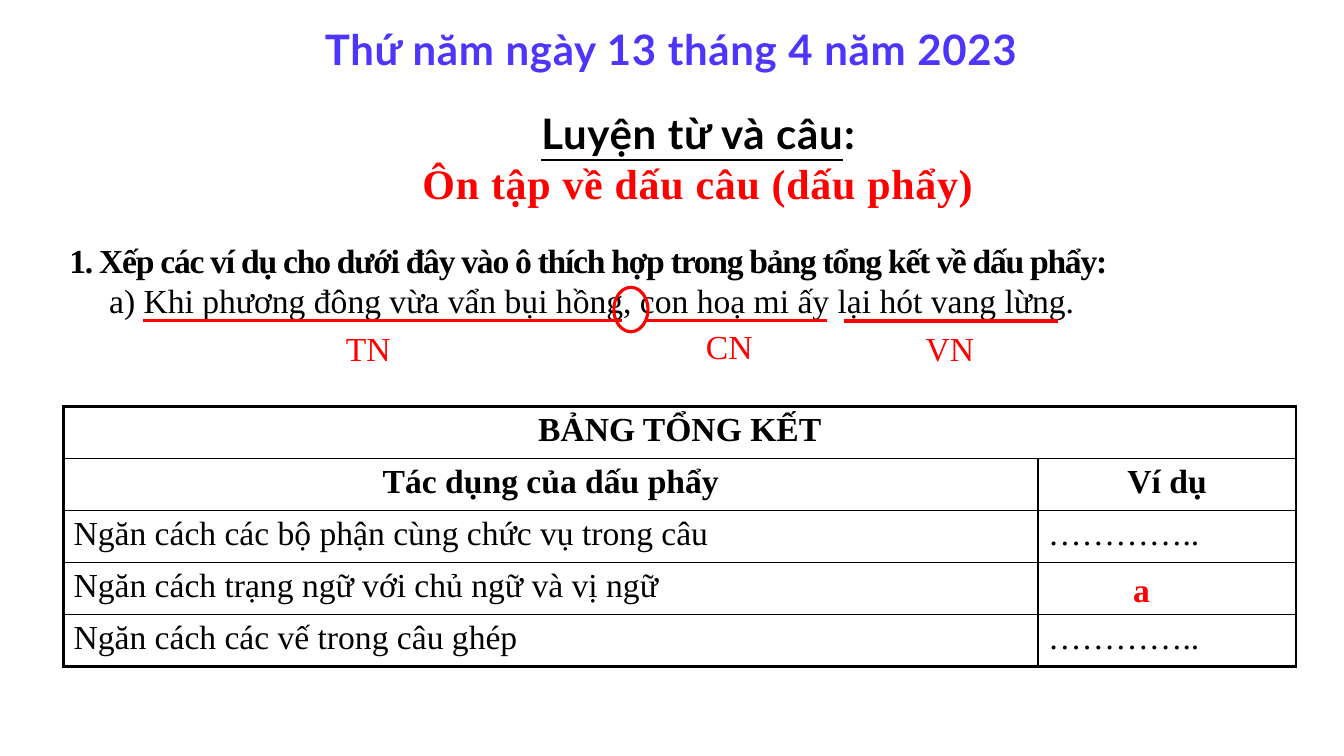
from dataclasses import dataclass

from lxml.etree import SubElement
from pptx import Presentation
from pptx.dml.color import RGBColor
from pptx.enum.shapes import MSO_CONNECTOR, MSO_SHAPE
from pptx.enum.text import MSO_ANCHOR, MSO_AUTO_SIZE, PP_ALIGN
from pptx.oxml import parse_xml
from pptx.oxml.ns import nsdecls, qn
from pptx.util import Cm, Pt


@dataclass(frozen=True)
class Theme:
    heading_font: str = "Lato"
    text_font: str = "Times New Roman"
    black: RGBColor = RGBColor(0, 0, 0)
    red: RGBColor = RGBColor(255, 0, 0)
    violet: RGBColor = RGBColor(0x4D, 0x35, 0xFB)
    heading_size: Pt = Pt(30)
    text_size: Pt = Pt(24)
    thin: Pt = Pt(1)
    thick: Pt = Pt(2.25)


THEME = Theme()
DOTS = "………….."
TABLE_ROWS = [
    ("BẢNG TỔNG KẾT", ""),
    ("Tác dụng của dấu phẩy", "Ví dụ"),
    ("Ngăn cách các bộ phận cùng chức vụ trong câu", DOTS),
    ("Ngăn cách trạng ngữ với chủ ngữ và vị ngữ", ""),
    ("Ngăn cách các vế trong câu ghép", DOTS),
]
# Label, its left and top, then the start, end and weight of its underline
SENTENCE_PARTS = [
    ("TN", 8.43, 8.13, 3.61, 15.67, Pt(2.25)),
    ("CN", 17.53, 8.08, 16.31, 20.85, Pt(2.25)),
    ("VN", 23.09, 8.13, 21.26, 26.67, Pt(3)),
]


def style(para, color=THEME.black, font=THEME.text_font, size=THEME.text_size,
          bold=False, align=PP_ALIGN.LEFT, spacing=0):
    """Format a whole paragraph; spacing is between letters, in points."""
    para.alignment = align
    para.space_before = Pt(0)
    para.font.name = font
    para.font.size = size
    para.font.bold = bold
    para.font.color.rgb = color
    properties = para._p.get_or_add_pPr()
    properties.get_or_add_defRPr().set("spc", str(round(spacing * 100)))


def place(shape, left, top, width, height):
    shape.left, shape.top = Cm(left), Cm(top)
    shape.width, shape.height = Cm(width), Cm(height)


def prepare_frame(shape, wrap=True):
    frame = shape.text_frame
    frame.word_wrap = wrap
    frame.auto_size = MSO_AUTO_SIZE.NONE
    frame.vertical_anchor = MSO_ANCHOR.TOP
    return frame


def add_text(page, text, left, top, width, height, wrap=True, **look):
    box = page.shapes.add_textbox(Cm(left), Cm(top), Cm(width), Cm(height))
    para = prepare_frame(box, wrap).paragraphs[0]
    para.text = text
    style(para, align=PP_ALIGN.CENTER, **look)


def fill_title(page):
    title = page.shapes.title
    place(title, 7.42, 2.57, 20.35, 2.82)
    frame = prepare_frame(title)
    subject = frame.paragraphs[0]
    span = subject.add_run()
    span.text = "Luyện từ và câu"
    span.font.underline = True
    subject.add_run().text = ":"
    lesson = frame.add_paragraph()
    lesson.text = "Ôn tập về dấu câu (dấu phẩy)"
    heading = dict(size=THEME.heading_size, bold=True,
                   align=PP_ALIGN.CENTER, spacing=0.5)
    style(subject, font=THEME.heading_font, **heading)
    style(lesson, color=THEME.red, **heading)


def fill_exercise(page):
    body = page.placeholders[1]
    place(body, 1.45, 5.89, 31.34, 2.36)
    frame = prepare_frame(body)
    frame.margin_left = frame.margin_right = Cm(0.3)
    frame.margin_top = frame.margin_bottom = Cm(0.15)
    task = frame.paragraphs[0]
    task.text = ("1. Xếp các ví dụ cho dưới đây vào ô thích hợp "
                 "trong bảng tổng kết về dấu phẩy:")
    example = frame.add_paragraph()
    example.text = ("a) Khi phương đông vừa vẩn bụi hồng, con hoạ mi ấy "
                    "lại hót vang lừng.")
    style(task, bold=True, align=PP_ALIGN.JUSTIFY, spacing=-0.9)
    style(example, align=PP_ALIGN.JUSTIFY)
    for para, indent in ((task, Cm(0)), (example, Cm(1))):
        properties = para._p.get_or_add_pPr()
        properties.set("marL", "0")
        properties.set("indent", str(indent))
        bullet = parse_xml(f"<a:buNone {nsdecls('a')}/>")
        properties.find(qn("a:defRPr")).addprevious(bullet)


def set_borders(cell, outer_edges):
    """Draw the four sides, in the order left, right, top, bottom."""
    properties = cell._tc.get_or_add_tcPr()
    for index, (side, is_outer) in enumerate(zip("LRTB", outer_edges)):
        width = THEME.thick if is_outer else THEME.thin
        properties.insert(index, parse_xml(
            f'<a:ln{side} {nsdecls("a")} w="{width}"><a:solidFill>'
            f'<a:srgbClr val="{THEME.black}"/></a:solidFill></a:ln{side}>'))


def add_summary_table(page):
    row_height, widths = Cm(1.31), (Cm(24.56), Cm(6.5))
    last_row, last_column = len(TABLE_ROWS) - 1, len(widths) - 1
    table = page.shapes.add_table(
        len(TABLE_ROWS), len(widths), Cm(1.6), Cm(10.24),
        sum(widths), row_height * len(TABLE_ROWS)).table
    table.first_row = table.horz_banding = False
    for column, width in zip(table.columns, widths):
        column.width = width
    table.cell(0, 0).merge(table.cell(0, last_column))
    for r, texts in enumerate(TABLE_ROWS):
        table.rows[r].height = row_height
        for c, text in enumerate(texts):
            cell = table.cell(r, c)
            cell.fill.background()
            right = last_column if cell.is_merge_origin else c
            set_borders(cell, (c == 0, right == last_column,
                               r == 0, r == last_row))
            if cell.is_spanned:
                continue
            is_header = r < 2
            para = cell.text_frame.paragraphs[0]
            para.text = text
            style(para, bold=is_header,
                  align=PP_ALIGN.CENTER if is_header else PP_ALIGN.LEFT)


def add_underline(page, start, end, weight):
    line = page.shapes.add_connector(
        MSO_CONNECTOR.STRAIGHT, Cm(start), Cm(8.08), Cm(end), Cm(8.08))
    line.line.color.rgb = THEME.red
    line.line.width = weight
    SubElement(line._element.spPr, qn("a:effectLst"))


def add_comma_ring(page):
    ring = page.shapes.add_shape(
        MSO_SHAPE.OVAL, Cm(15.47), Cm(7.24), Cm(0.86), Cm(1.12))
    ring.shadow.inherit = False
    ring.fill.background()
    ring.line.color.rgb = THEME.red
    ring.line.width = THEME.thick


def main():
    deck = Presentation()
    deck.slide_width, deck.slide_height = Cm(33.87), Cm(19.05)
    page = deck.slides.add_slide(deck.slide_layouts[1])
    fill_title(page)
    fill_exercise(page)
    add_summary_table(page)
    for label, left, top, start, end, weight in SENTENCE_PARTS:
        add_underline(page, start, end, weight)
        add_text(page, label, left, top, 1.7, 1.28, wrap=False,
                 color=THEME.red)
    add_text(page, "a", 26.44, 14.2, 4.65, 1.07, color=THEME.red, bold=True)
    add_comma_ring(page)
    add_text(page, "Thứ năm ngày 13 tháng 4 năm 2023", 2.46, 0.48, 28.93, 1.55,
             color=THEME.violet, font=THEME.heading_font,
             size=THEME.heading_size, bold=True, spacing=0.5)
    deck.save("out.pptx")


if __name__ == "__main__":
    main()
